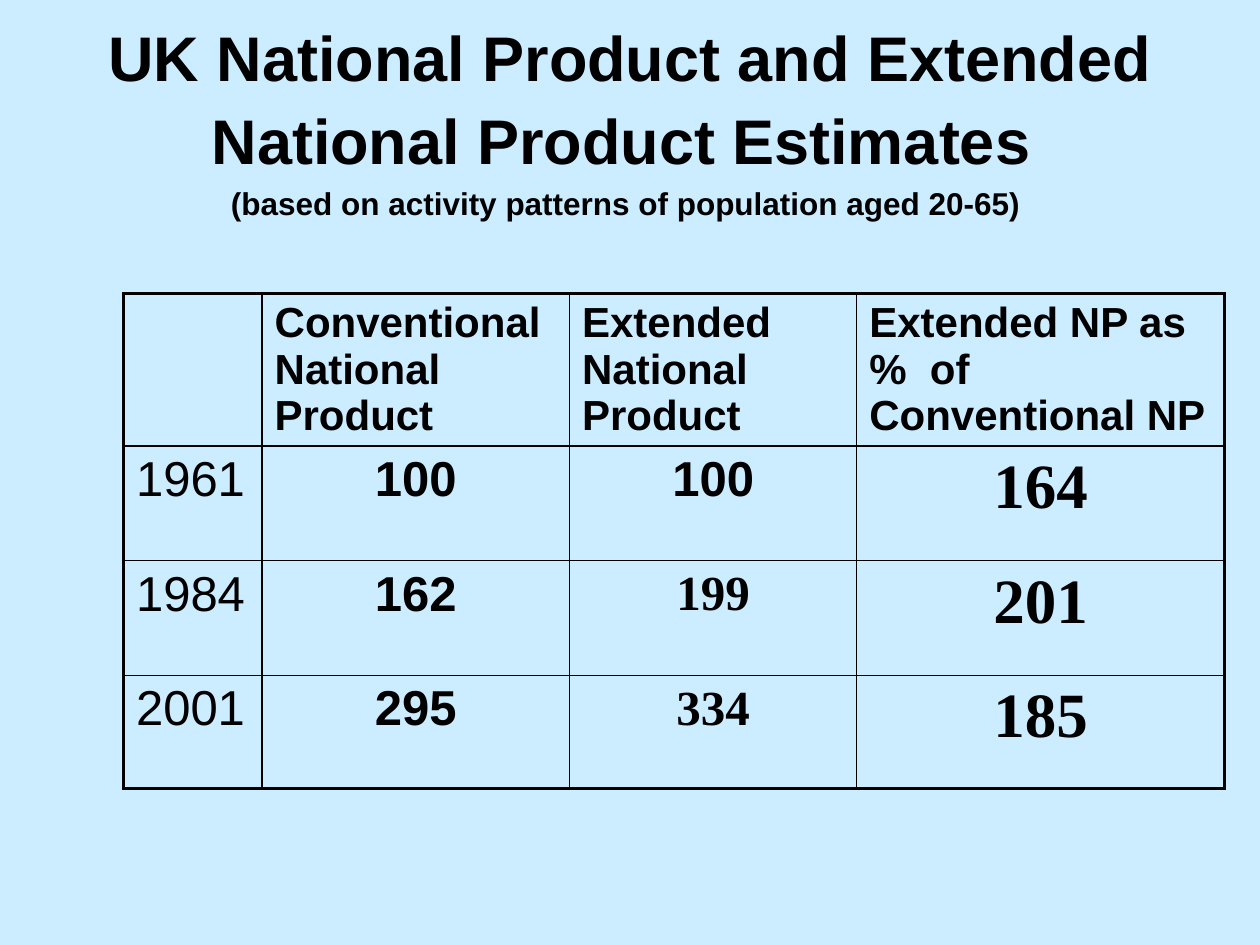
from dataclasses import dataclass

from lxml import etree
from pptx import Presentation
from pptx import util as u
from pptx.dml.color import RGBColor
from pptx.enum import text
from pptx.oxml.ns import qn


@dataclass(frozen=True)
class Theme:
    background: RGBColor = RGBColor(0xCC, 0xEC, 0xFF)
    ink: RGBColor = RGBColor(0, 0, 0)
    sans: str = "Arial"
    serif: str = "Times New Roman"
    title: float = 36
    subtitle: float = 18
    header: float = 24
    value: float = 28
    ratio: float = 36
    title_leading: float = 47.4
    header_leading: float = 26.6
    inner_border: float = 1
    outer_border: float = 2.25


@dataclass(frozen=True)
class Entry:
    words: str
    size: float
    face: str
    bold: bool = True
    centred: bool = True
    leading: float | None = None


THEME = Theme()
COLUMN_WIDTHS = (1.1, 2.44, 2.28, 2.92)
ROW_HEIGHTS = (1.21, 0.91, 0.91, 0.9)
HEADERS = ("", "Conventional National Product", "Extended National Product",
           "Extended NP as %  of Conventional NP")
# Year, conventional, extended, extended as %, typeface of the extended value
ESTIMATES = (
    ("1961", "100", "100", "164", THEME.sans),
    ("1984", "162", "199", "201", THEME.serif),
    ("2001", "295", "334", "185", THEME.serif),
)


def write(paragraph, entry: Entry) -> None:
    paragraph.text = entry.words
    paragraph.alignment = text.PP_ALIGN.CENTER if entry.centred else text.PP_ALIGN.LEFT
    if entry.leading:
        paragraph.line_spacing = u.Pt(entry.leading)
    font = paragraph.font
    font.name, font.size, font.bold = entry.face, u.Pt(entry.size), entry.bold
    font.color.rgb = THEME.ink


def set_borders(cell, outer_sides: dict[str, bool]) -> None:
    properties = cell._tc.get_or_add_tcPr()
    for order, (side, is_outer) in enumerate(outer_sides.items()):
        width = THEME.outer_border if is_outer else THEME.inner_border
        line = etree.Element(qn(f"a:ln{side}"), w=str(u.Pt(width)))
        fill = etree.SubElement(line, qn("a:solidFill"))
        etree.SubElement(fill, qn("a:srgbClr"), val=str(THEME.ink))
        properties.insert(order, line)


def add_title(slide) -> None:
    box = slide.shapes.add_textbox(u.Inches(0.5), u.Inches(0.3), u.Inches(9), u.Inches(1.25))
    frame = box.text_frame
    frame.word_wrap = True
    frame.vertical_anchor = text.MSO_ANCHOR.MIDDLE
    write(frame.paragraphs[0], Entry(
        "UK National Product and Extended National Product Estimates ",
        THEME.title, THEME.sans, leading=THEME.title_leading))
    subtitle = frame.add_paragraph()
    write(subtitle, Entry("(based on activity patterns of population aged 20-65) ",
                          THEME.subtitle, THEME.sans))
    subtitle.space_before = u.Pt(3.6)


def table_rows() -> list[list[Entry]]:
    rows = [[Entry(header, THEME.header, THEME.sans, centred=False,
                   leading=THEME.header_leading) for header in HEADERS]]
    for year, conventional, extended, ratio, extended_face in ESTIMATES:
        rows.append([
            Entry(year, THEME.value, THEME.sans, bold=False, centred=False),
            Entry(conventional, THEME.value, THEME.sans),
            Entry(extended, THEME.value, extended_face),
            Entry(ratio, THEME.ratio, THEME.serif),
        ])
    return rows


def add_estimates(slide) -> None:
    rows = table_rows()
    last_row, last_column = len(rows) - 1, len(HEADERS) - 1
    table = slide.shapes.add_table(
        len(rows), len(HEADERS), u.Inches(0.98), u.Inches(2.33),
        u.Inches(sum(COLUMN_WIDTHS)), u.Inches(sum(ROW_HEIGHTS))).table
    table.first_row = table.horz_banding = False
    for column, width in zip(table.columns, COLUMN_WIDTHS):
        column.width = u.Inches(width)
    for row, height in zip(table.rows, ROW_HEIGHTS):
        row.height = u.Inches(height)

    for r, entries in enumerate(rows):
        for c, entry in enumerate(entries):
            cell = table.cell(r, c)
            write(cell.text_frame.paragraphs[0], entry)
            cell.fill.background()
            set_borders(cell, {"L": c == 0, "R": c == last_column,
                               "T": r == 0, "B": r == last_row})


def main() -> None:
    deck = Presentation()
    deck.slide_width, deck.slide_height = u.Inches(10), u.Inches(7.5)
    slide = deck.slides.add_slide(deck.slide_layouts[6])

    # Background
    slide.background.fill.solid()
    slide.background.fill.fore_color.rgb = THEME.background

    # Title and table
    add_title(slide)
    add_estimates(slide)
    deck.save("out.pptx")


if __name__ == "__main__":
    main()
